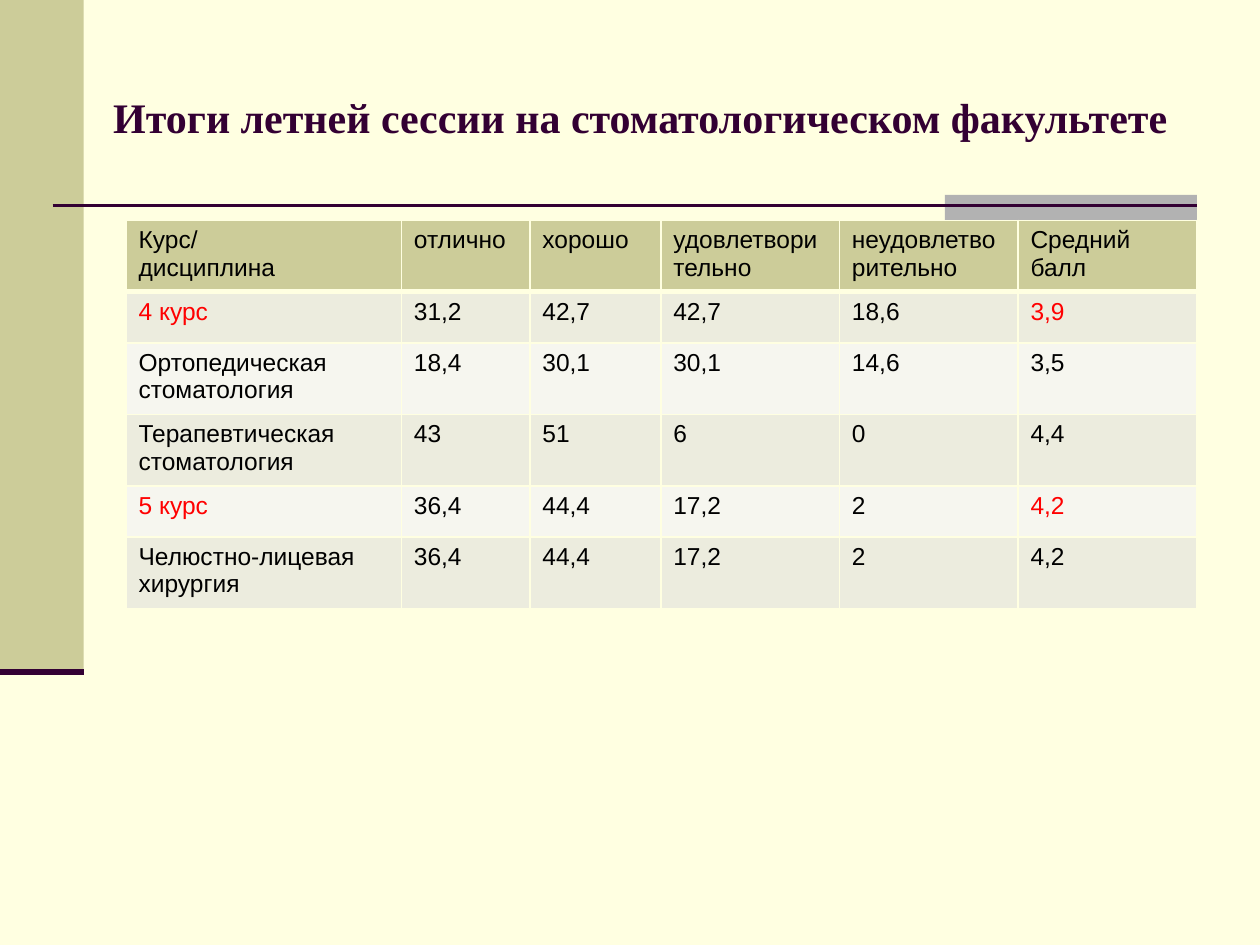
from dataclasses import dataclass

from lxml import etree
from pptx import Presentation
from pptx.dml.color import RGBColor
from pptx.enum.shapes import MSO_CONNECTOR, MSO_SHAPE
from pptx.enum.text import MSO_ANCHOR, PP_ALIGN
from pptx.oxml.ns import qn
from pptx.slide import Slide
from pptx.table import _Cell
from pptx.text.text import _Paragraph
from pptx.util import Cm, Pt

RECT = MSO_SHAPE.RECTANGLE
STRAIGHT = MSO_CONNECTOR.STRAIGHT
MIDDLE = MSO_ANCHOR.MIDDLE
CENTER = PP_ALIGN.CENTER

COLORS = {
    "background": "FFFFE1",
    "olive": "CCCC99",
    "gray": "B2B2B2",
    "plum": "330033",
    "odd_row": "ECECDE",
    "even_row": "F6F6EF",
    "text": "000000",
    "accent": "FF0000",
}
TITLE_FONT = {"name": "Times New Roman", "size": Pt(24), "bold": True}
CELL_FONT = {"name": "Arial", "size": Pt(14), "bold": False}

COL_WIDTHS = [5.55, 2.59, 2.64, 3.6, 3.6, 3.6]
ROW_HEIGHT = 1.03
ROWS = [
    ["Курс/\nдисциплина", "отлично", "хорошо", "удовлетворительно",
     "неудовлетворительно", "Средний балл"],
    ["4 курс", "31,2", "42,7", "42,7", "18,6", "3,9"],
    ["Ортопедическая стоматология", "18,4", "30,1", "30,1", "14,6", "3,5"],
    ["Терапевтическая стоматология", "43", "51", "6", "0", "4,4"],
    ["5 курс", "36,4", "44,4", "17,2", "2", "4,2"],
    ["Челюстно-лицевая хирургия", "36,4", "44,4", "17,2", "2", "4,2"],
]


@dataclass
class Block:
    left: float
    top: float
    width: float
    height: float
    color: str


@dataclass
class Rule:
    left: float
    right: float
    y: float
    weight: float


BLOCKS = [
    Block(0, 0, 1.69, 13.55, "olive"),
    Block(19.05, 3.93, 5.08, 0.51, "gray"),
]
RULES = [Rule(1.06, 24.13, 4.14, 1.5), Rule(0, 1.69, 13.55, 3.5)]


def rgb(color: str) -> RGBColor:
    return RGBColor.from_string(COLORS[color])


def add_block(s: Slide, block: Block) -> None:
    sp = s.shapes.add_shape(RECT, Cm(block.left), Cm(block.top),
                            Cm(block.width), Cm(block.height))
    sp.shadow.inherit = False
    sp.fill.solid()
    sp.fill.fore_color.rgb = rgb(block.color)
    sp.line.fill.background()


def add_rule(s: Slide, rule: Rule) -> None:
    cxn = s.shapes.add_connector(STRAIGHT, Cm(rule.left), Cm(rule.y),
                                 Cm(rule.right), Cm(rule.y))
    cxn.line.color.rgb = rgb("plum")
    cxn.line.width = Pt(rule.weight)
    etree.SubElement(cxn._element.spPr, qn("a:effectLst"))


def write(p: _Paragraph, text: str, font: dict, color: str) -> None:
    r = p.add_run()
    r.text = text
    for name, value in font.items():
        setattr(r.font, name, value)
    r.font.color.rgb = rgb(color)


def add_title(s: Slide, text: str) -> None:
    tf = s.shapes.add_textbox(Cm(1.69), Cm(0.76), Cm(22.44), Cm(3.18)).text_frame
    tf.word_wrap = True
    tf.vertical_anchor = MIDDLE
    p = tf.paragraphs[0]
    p.alignment = CENTER
    write(p, text, TITLE_FONT, "plum")


def set_borders(cell: _Cell, top: float, bottom: float) -> None:
    tc_pr = cell._tc.get_or_add_tcPr()
    for side, weight in {"L": 1, "R": 1, "T": top, "B": bottom}.items():
        ln = etree.SubElement(tc_pr, qn(f"a:ln{side}"), w=str(Pt(weight)))
        fill = etree.SubElement(ln, qn("a:solidFill"))
        etree.SubElement(fill, qn("a:srgbClr"), val=COLORS["background"])


def fill_cell(cell: _Cell, text: str, fill: str, color: str) -> None:
    cell.fill.solid()
    cell.fill.fore_color.rgb = rgb(fill)
    tf = cell.text_frame
    for i, line in enumerate(text.split("\n")):
        p = tf.add_paragraph() if i else tf.paragraphs[0]
        write(p, line, CELL_FONT, color)


def add_results(s: Slide) -> None:
    table = s.shapes.add_table(len(ROWS), len(COL_WIDTHS), Cm(2.54), Cm(4.44),
                               Cm(sum(COL_WIDTHS)), Cm(ROW_HEIGHT * len(ROWS))).table
    for col, width in zip(table.columns, COL_WIDTHS):
        col.width = Cm(width)
    for i, values in enumerate(ROWS):
        table.rows[i].height = Cm(ROW_HEIGHT)
        fill = "olive" if i == 0 else "odd_row" if i % 2 else "even_row"
        is_total = values[0].endswith(" курс")
        for j, text in enumerate(values):
            cell = table.cell(i, j)
            set_borders(cell, 3 if i == 1 else 1, 3 if i == 0 else 1)
            marked = is_total and j in (0, len(values) - 1)
            fill_cell(cell, text, fill, "accent" if marked else "text")


def main() -> None:
    prs = Presentation()
    prs.slide_width, prs.slide_height = Cm(25.4), Cm(19.05)
    s = prs.slides.add_slide(prs.slide_layouts[6])
    s.background.fill.solid()
    s.background.fill.fore_color.rgb = rgb("background")
    for block in BLOCKS:
        add_block(s, block)
    for rule in RULES:
        add_rule(s, rule)
    add_title(s, "Итоги летней сессии на стоматологическом факультете")
    add_results(s)
    prs.save("out.pptx")


if __name__ == "__main__":
    main()
